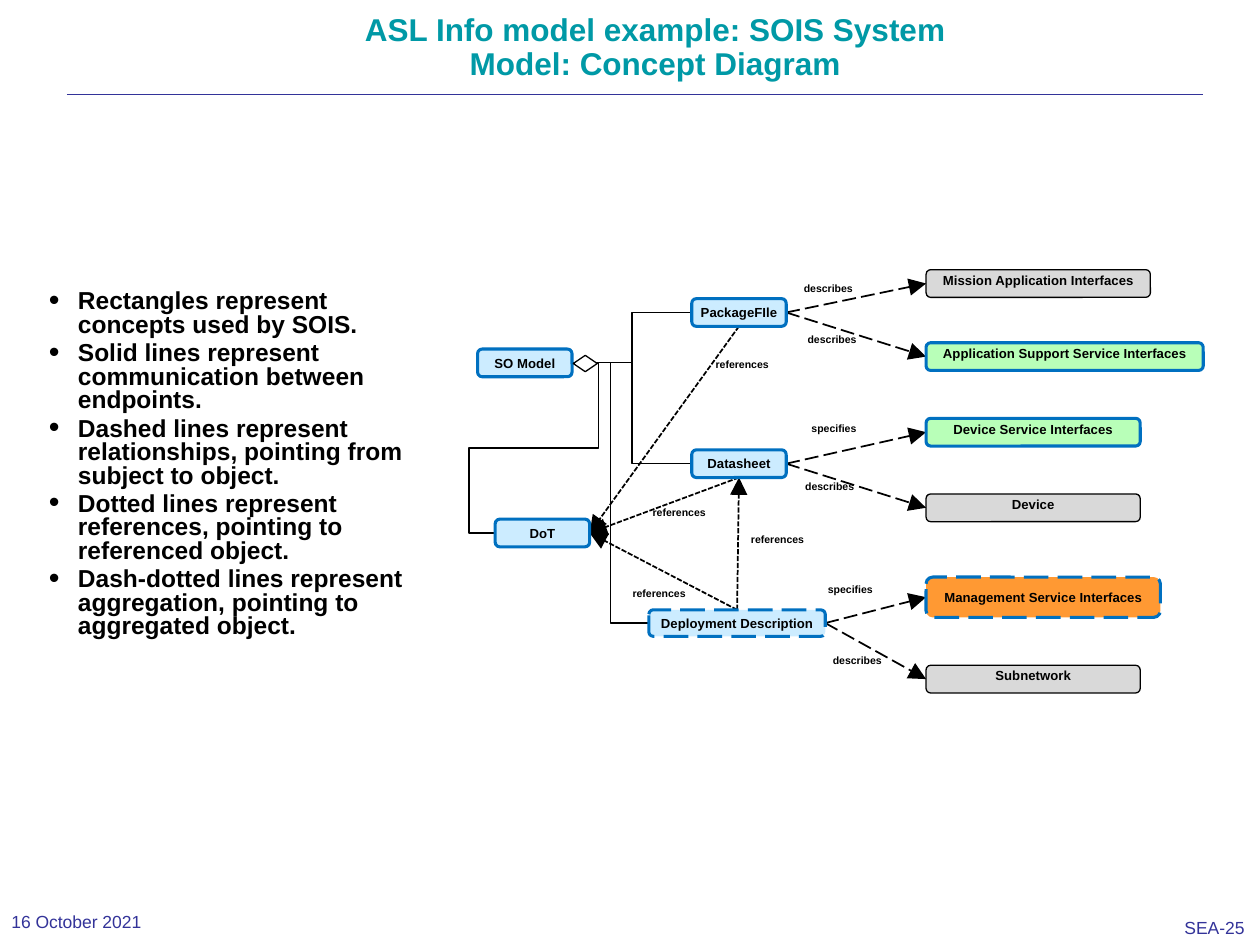
from lxml.etree import SubElement
from pptx import Presentation
from pptx.dml.color import RGBColor
from pptx.enum.dml import MSO_LINE
from pptx.enum.shapes import MSO_CONNECTOR, MSO_SHAPE
from pptx.enum.text import MSO_ANCHOR, MSO_AUTO_SIZE, PP_ALIGN
from pptx.oxml.ns import qn
from pptx.util import Inches, Pt

COLORS = {"black": "000000", "white": "FFFFFF", "teal": "0099A6", "navy": "333399",
          "blue": "0070C0", "sky": "CCECFF", "gray": "D9D9D9", "green": "B8FFB8",
          "orange": "FF9933"}
rgb = {name: RGBColor.from_string(code) for name, code in COLORS.items()}

deck = Presentation()
deck.slide_width, deck.slide_height = Inches(10), Inches(7.5)
slide = deck.slides.add_slide(deck.slide_layouts[5])
shapes = slide.shapes


def write(shape, lines, size, color="black", bold=True, align=PP_ALIGN.LEFT,
          anchor=MSO_ANCHOR.TOP, pad=(0.1, 0.05), wrap=True):
    frame = shape.text_frame
    frame.text = "\n".join(lines)
    frame.word_wrap = wrap
    frame.auto_size = MSO_AUTO_SIZE.NONE if wrap else MSO_AUTO_SIZE.SHAPE_TO_FIT_TEXT
    frame.vertical_anchor = anchor
    frame.margin_left = frame.margin_right = Inches(pad[0])
    frame.margin_top = frame.margin_bottom = Inches(pad[1])
    for para in frame.paragraphs:
        para.alignment = align
        for run in para.runs:
            font = run.font
            font.name, font.size, font.bold = "Arial", Pt(size), bold
            font.color.rgb = rgb[color]
    return frame


def link(start, end, kind=MSO_CONNECTOR.STRAIGHT, color="black", width=0.75, dash=None):
    wire = shapes.add_connector(kind, *[Inches(v) for v in (*start, *end)])
    wire.line.color.rgb = rgb[color]
    wire.line.width = Pt(width)
    if dash:
        wire.line.dash_style = dash
        SubElement(wire.line._get_or_add_ln(), qn("a:tailEnd"), type="triangle", w="lg", len="lg")
    SubElement(wire._element.spPr, qn("a:effectLst"))
    return wire


link((0.53, 0.75), (9.55, 0.75), color="navy", width=0.13)

title = shapes.title
title.left, title.top = Inches(2.5), Inches(-0.57)
title.width, title.height = Inches(5.4), Inches(1.27)
frame = write(title, ["ASL Info model example: SOIS System Model: Concept Diagram"], 18, "teal",
              align=PP_ALIGN.CENTER, anchor=MSO_ANCHOR.BOTTOM)
frame.paragraphs[0].line_spacing = 0.9

notes = ["Rectangles represent concepts used by SOIS.",
         "Solid lines represent communication between endpoints.",
         "Dashed lines represent relationships, pointing from subject to object.",
         "Dotted lines represent references, pointing to referenced object.",
         "Dash-dotted lines represent aggregation, pointing to aggregated object."]
body = shapes.add_textbox(Inches(0.29), Inches(2.26), Inches(3.29), Inches(3.91))
for i, para in enumerate(write(body, notes, 14).paragraphs):
    para.line_spacing = 0.8
    para.space_before = Pt(1.4 if i else 0)
    para.space_after = Pt(1.4)
    props = para._p.get_or_add_pPr()
    props.set("marL", str(Inches(0.23)))
    props.set("indent", str(Inches(-0.23)))
    SubElement(props, qn("a:buSzPct"), val="125000")
    SubElement(props, qn("a:buFont"), typeface="Arial")
    SubElement(props, qn("a:buChar"), char="•")

mid, top = MSO_ANCHOR.MIDDLE, MSO_ANCHOR.TOP
boxes = {
    "SO Model": (3.79, 2.77, 0.75, 0.22, "sky", mid),
    "PackageFIle": (5.49, 2.37, 0.75, 0.22, "sky", mid),
    "Datasheet": (5.49, 3.57, 0.75, 0.22, "sky", mid),
    "DoT": (3.93, 4.12, 0.75, 0.22, "sky", mid),
    "Deployment Description": (5.15, 4.84, 1.4, 0.21, "sky", mid),
    "Mission Application Interfaces": (7.35, 2.14, 1.78, 0.22, "gray", top),
    "Application Support Service Interfaces": (7.35, 2.72, 2.2, 0.22, "green", top),
    "Device Service Interfaces": (7.35, 3.32, 1.7, 0.22, "green", top),
    "Device": (7.35, 3.92, 1.7, 0.22, "gray", top),
    "Management Service Interfaces": (7.35, 4.58, 1.86, 0.32, "orange", mid),
    "Subnetwork": (7.35, 5.28, 1.7, 0.22, "gray", top),
}
dashed = ("Deployment Description", "Management Service Interfaces")
ports = {}
for name, (x, y, w, h, *_) in boxes.items():
    ports[name] = {"left": (x, y + h / 2), "right": (x + w, y + h / 2),
                   "top": (x + w / 2, y), "base": (x + w / 2, y + h)}

hub = ports["SO Model"]["right"]
for name in ("PackageFIle", "Datasheet", "Deployment Description"):
    link(ports[name]["left"], hub, MSO_CONNECTOR.ELBOW)

loop = link(ports["DoT"]["left"], hub, MSO_CONNECTOR.ELBOW)._element.spPr
turn = loop.find(qn("a:xfrm"))
turn.attrib.pop("flipV", None)
turn.set("rot", "10800000")
turn.set("flipH", "1")
shape = loop.find(qn("a:prstGeom"))
shape.set("prst", "bentConnector5")
bends = shape.get_or_add_avLst()
for i, bend in enumerate((-34300, 50000, 134300), 1):
    SubElement(bends, qn("a:gd"), name=f"adj{i}", fmla=f"val {bend}")

targets = {
    "PackageFIle": ("Mission Application Interfaces", "Application Support Service Interfaces"),
    "Datasheet": ("Device Service Interfaces", "Device"),
    "Deployment Description": ("Management Service Interfaces", "Subnetwork"),
}
for name, ends in targets.items():
    for end in ends:
        link(ports[name]["right"], ports[end]["left"], width=1, dash=MSO_LINE.LONG_DASH)

refs = [("PackageFIle", "base", "DoT", "right"), ("Datasheet", "base", "DoT", "right"),
        ("Deployment Description", "top", "DoT", "right"),
        ("Deployment Description", "top", "Datasheet", "base")]
for name, side, end, port in refs:
    link(ports[name][side], ports[end][port], width=1, dash=MSO_LINE.SQUARE_DOT)

for name, (x, y, w, h, fill, anchor) in boxes.items():
    box = shapes.add_shape(MSO_SHAPE.ROUNDED_RECTANGLE, Inches(x), Inches(y), Inches(w), Inches(h))
    box.shadow.inherit = False
    box.fill.solid()
    box.fill.fore_color.rgb = rgb[fill]
    box.line.color.rgb = rgb["black" if fill == "gray" else "blue"]
    box.line.width = Pt(0.75 if fill == "gray" else 1.75)
    if name in dashed:
        box.line.dash_style = MSO_LINE.LONG_DASH
    write(box, [name], 7.5, align=PP_ALIGN.CENTER, anchor=anchor, pad=(0.01, 0.01))

gem = shapes.add_shape(MSO_SHAPE.FLOWCHART_DECISION, Inches(4.58), Inches(2.79),
                       Inches(0.13), Inches(0.19))
gem.rotation = 270
gem.shadow.inherit = False
gem.fill.solid()
gem.fill.fore_color.rgb = rgb["white"]
gem.line.color.rgb = rgb["black"]
gem.line.width = Pt(0.75)

labels = {
    "describes": (0.44, [(6.38, 2.24), (6.41, 2.64), (6.39, 3.81), (6.61, 5.19)]),
    "specifies": (0.41, [(6.44, 3.35), (6.57, 4.63)]),
    "references": (0.48, [(5.68, 2.84), (5.18, 4.02), (5.96, 4.23), (5.02, 4.66)]),
}
for word, (w, spots) in labels.items():
    for x, y in spots:
        tag = shapes.add_textbox(Inches(x), Inches(y), Inches(w), Inches(0.13))
        write(tag, [word], 6, pad=(0, 0), wrap=False)

date = shapes.add_textbox(Inches(0), Inches(7.17), Inches(1.89), Inches(0.29))
write(date, ["16 October 2021"], 10, "navy", False, anchor=mid, pad=(0.09, 0.05))
page = shapes.add_textbox(Inches(9.31), Inches(7.24), Inches(0.68), Inches(0.26))
write(page, ["SEA-25"], 10, "navy", False, pad=(0.09, 0.04), wrap=False)

deck.save("out.pptx")
